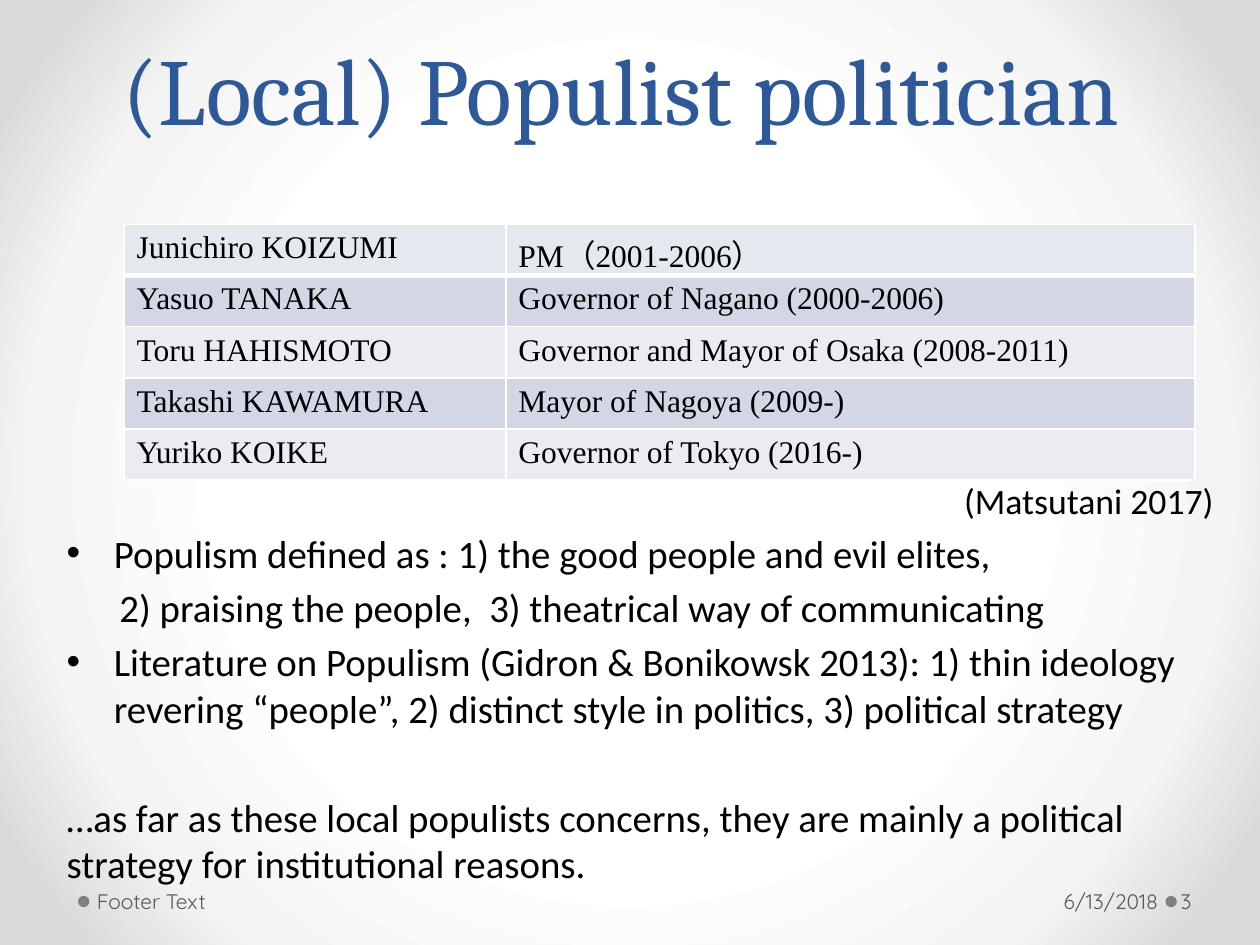
from lxml import etree
from pptx import Presentation
from pptx.dml.color import RGBColor
from pptx.enum import shapes, text
from pptx.oxml import parse_xml
from pptx.oxml.ns import nsdecls, qn
from pptx.util import Pt

HUES = {"title": "2F5897", "ink": "000000", "foot": "595959", "dot": "808080",
        "head": "E4E9EF", "odd": "D2D6E5", "even": "EAECF2", "rule": "FFFFFF"}
GLOW = [(50, "FFFFFF"), (76, "F4F4F4"), (92, "DADADA")]
TITLE = "(Local) Populist politician"
ROWS = [
    ("Junichiro KOIZUMI", "PM（2001-2006）"),
    ("Yasuo TANAKA", "Governor of Nagano (2000-2006)"),
    ("Toru HAHISMOTO", "Governor and Mayor of Osaka (2008-2011)"),
    ("Takashi KAWAMURA", "Mayor of Nagoya (2009-)"),
    ("Yuriko KOIKE", "Governor of Tokyo (2016-)"),
]
COLS = [218.2, 393.8]
ROW = 29.25
LEFT, RIGHT = text.PP_ALIGN.LEFT, text.PP_ALIGN.RIGHT
# text, size, align, space before, left margin, first-line indent, bullet
BODY = [
    ("(Matsutani 2017)", 20.4, RIGHT, 0, 0, 0, False),
    ("Populism defined as : 1) the good people and evil elites,",
     22.2, LEFT, 4.4, 27, -27, True),
    ("2) praising the people,  3) theatrical way of communicating",
     22.2, LEFT, 4.4, 30.2, 0, False),
    ("Literature on Populism (Gidron & Bonikowsk 2013): 1) thin ideology "
     "revering “people”, 2) distinct style in politics, 3) political strategy",
     22.2, LEFT, 4.4, 27, -27, True),
    ("…as far as these local populists concerns, they are mainly a political "
     "strategy for institutional reasons.", 22.2, LEFT, 35.5, 0, 0, False),
]
# text, left, width, align, left inset, right inset
FOOT = [
    ("6/13/2018", 501.1, 164.2, RIGHT, 7.2, 3.6),
    ("Footer Text", 51.8, 224, LEFT, 3.6, 7.2),
    ("3", 672.5, 44, LEFT, 2.2, 3.6),
]
DOTS = [666, 44.6]


def style(par, size, face, hue):
    par.font.size, par.font.name = Pt(size), face
    par.font.color.rgb = RGBColor.from_string(HUES[hue])


def box(slide, x, y, w, h):
    frame = slide.shapes.add_textbox(Pt(x), Pt(y), Pt(w), Pt(h)).text_frame
    frame.word_wrap = True
    return frame


def glow(slide):
    """Set the round gradient behind the slide."""
    stops = "".join(f'<a:gs pos="{pos * 1000}"><a:srgbClr val="{hue}"/></a:gs>'
                    for pos, hue in GLOW)
    back = parse_xml(
        f'<p:bg {nsdecls("p", "a")}><p:bgPr><a:gradFill rotWithShape="1">'
        f'<a:gsLst>{stops}</a:gsLst><a:path path="circle">'
        '<a:fillToRect l="50000" t="50000" r="50000" b="50000"/></a:path>'
        '</a:gradFill><a:effectLst/></p:bgPr></p:bg>')
    slide.element.cSld.insert(0, back)


def edge(cell, low):
    """Draw the four borders; low is the width of the bottom one."""
    props = cell._tc.get_or_add_tcPr()
    for spot, (tag, wide) in enumerate([("lnL", 1), ("lnR", 1),
                                       ("lnT", 1), ("lnB", low)]):
        line = parse_xml(
            f'<a:{tag} {nsdecls("a")} w="{Pt(wide)}"><a:solidFill>'
            f'<a:srgbClr val="{HUES["rule"]}"/></a:solidFill></a:{tag}>')
        props.insert(spot, line)


def grid(slide):
    table = slide.shapes.add_table(
        len(ROWS), len(COLS), Pt(70.9), Pt(128.2),
        Pt(sum(COLS)), Pt(ROW * len(ROWS))).table
    for col, wide in zip(table.columns, COLS):
        col.width = Pt(wide)
    for r, row in enumerate(ROWS):
        table.rows[r].height = Pt(ROW)
        hue = "head" if r == 0 else "odd" if r % 2 else "even"
        for c, word in enumerate(row):
            cell = table.cell(r, c)
            cell.text = word
            par = cell.text_frame.paragraphs[0]
            style(par, 18, "Times New Roman", "ink")
            par.font.bold = False
            cell.fill.solid()
            cell.fill.fore_color.rgb = RGBColor.from_string(HUES[hue])
            edge(cell, 1 if r else 3)


def body(slide):
    frame = box(slide, 31, 270, 669.6, 240)
    for n, (word, size, align, gap, left, first, mark) in enumerate(BODY):
        par = frame.add_paragraph() if n else frame.paragraphs[0]
        par.text, par.alignment, par.space_before = word, align, Pt(gap)
        style(par, size, "Calibri", "ink")
        props = par._p.get_or_add_pPr()
        props.set("marL", str(Pt(left)))
        props.set("indent", str(Pt(first)))
        if mark:
            face = etree.SubElement(props, qn("a:buFont"), typeface="Arial")
            dot = etree.SubElement(props, qn("a:buChar"), char="•")
            props.find(qn("a:defRPr")).addprevious(face)
            face.addnext(dot)


def foot(slide):
    for word, x, w, align, left, right in FOOT:
        frame = box(slide, x, 500.4, w, 28.8)
        frame.margin_left, frame.margin_right = Pt(left), Pt(right)
        frame.vertical_anchor = text.MSO_ANCHOR.MIDDLE
        par = frame.paragraphs[0]
        par.text, par.alignment = word, align
        style(par, 12, "Quicksand", "foot")


def dots(slide):
    for x in DOTS:
        dot = slide.shapes.add_shape(shapes.MSO_SHAPE.OVAL, Pt(x), Pt(511.9),
                                     Pt(6.5), Pt(6.5))
        dot.shadow.inherit = False
        dot.fill.solid()
        dot.fill.fore_color.rgb = RGBColor.from_string(HUES["dot"])
        dot.line.fill.background()


def head(slide):
    title = slide.shapes.title
    title.left, title.top = Pt(31), Pt(15.1)
    title.width, title.height = Pt(648), Pt(71.3)
    title.text_frame.text = TITLE
    title.text_frame.vertical_anchor = text.MSO_ANCHOR.BOTTOM
    par = title.text_frame.paragraphs[0]
    par.alignment, par.line_spacing = text.PP_ALIGN.CENTER, Pt(58)
    style(par, 54, "Cambria", "title")


def main():
    deck = Presentation()
    deck.slide_width, deck.slide_height = Pt(720), Pt(540)
    slide = deck.slides.add_slide(deck.slide_layouts[5])
    for part in (glow, dots, head, body, foot, grid):
        part(slide)
    deck.save("out.pptx")


if __name__ == "__main__":
    main()
